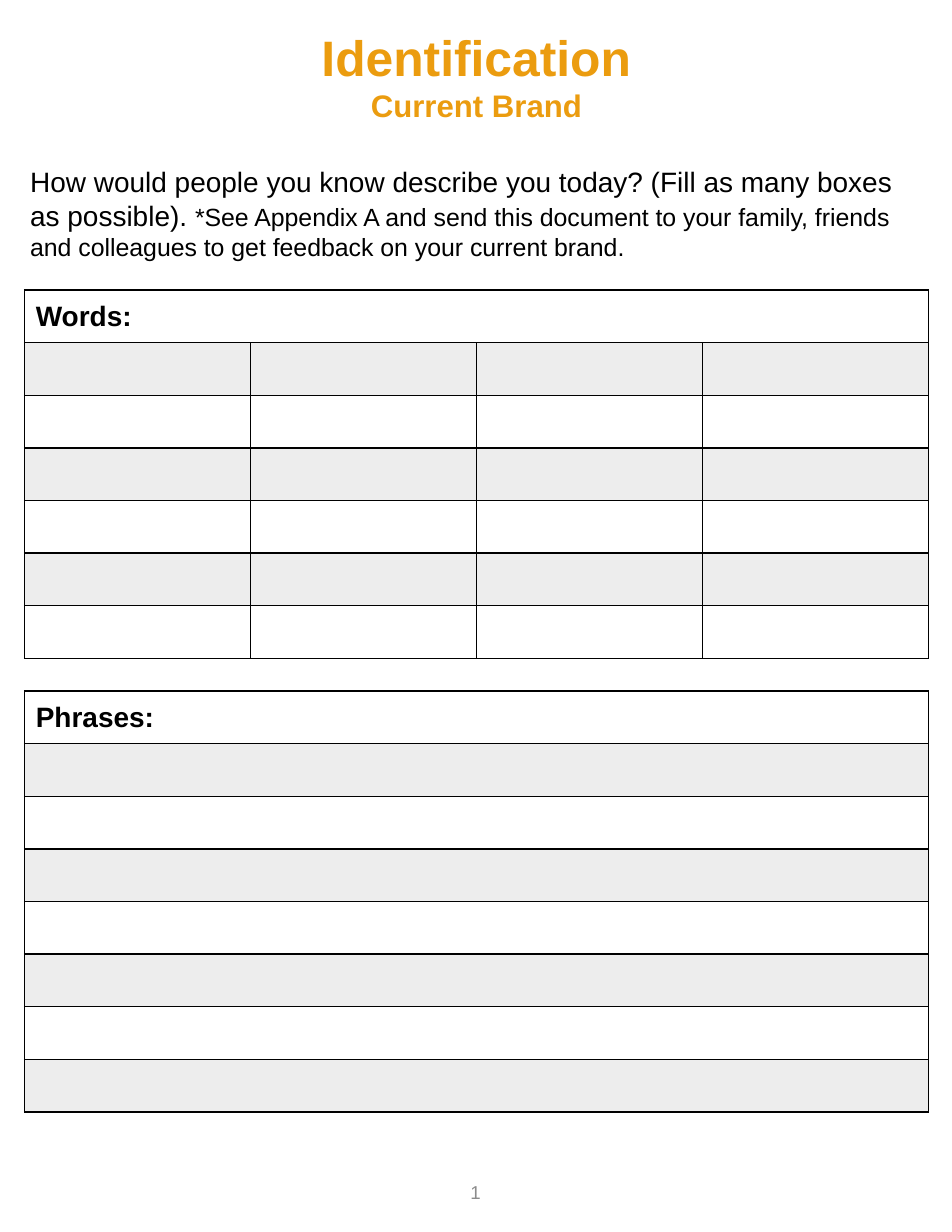
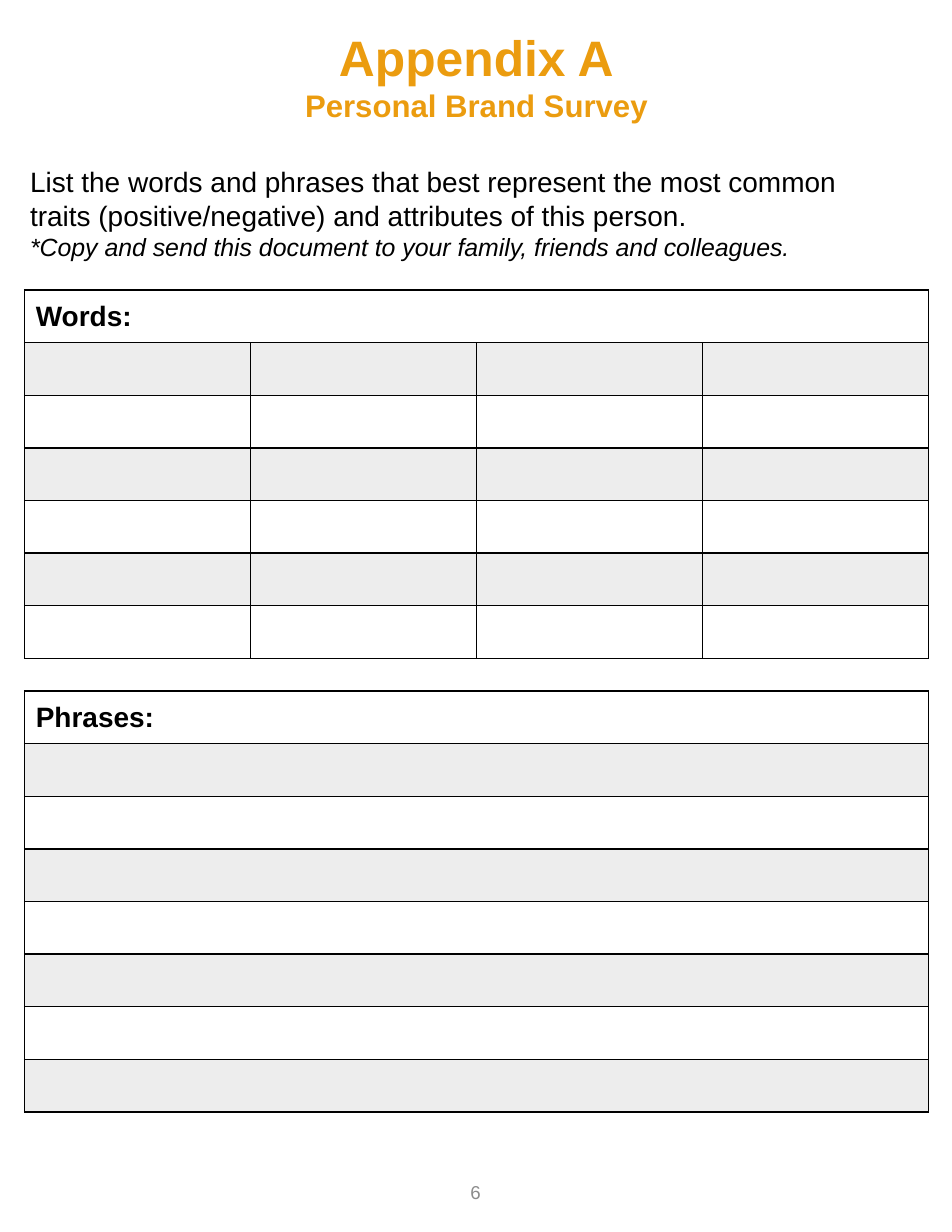
from lxml import etree
from pptx import Presentation
from pptx.dml.color import RGBColor
from pptx.enum import text
from pptx.oxml import ns
from pptx.util import Inches, Pt

COLORS = {
    "paper": "FFFFFF",
    "title": "EB9C0F",
    "ink": "000000",
    "band": "EDEDED",
    "number": "8C8C8C",
}
FONT = "Arial"
ROW_HEIGHT = 0.47

# Regions shared by both pages: left, top, width, height
TITLE_BOX = (1.17, 0.19, 6.17, 0.98)
PROMPT_BOX = (0.17, 1.42, 7.99, 0.98)
WORDS_BOX = (0.22, 2.59, 8.07, 7 * ROW_HEIGHT)
PHRASES_BOX = (0.22, 6.17, 8.07, 8 * ROW_HEIGHT)
NUMBER_BOX = (2.9, 10.2, 2.69, 0.59)

# Each prompt is a list of paragraphs, each a list of (wording, size, italic)
PAGES = [
    ("Identification", "Current Brand", [[
        ("How would people you know describe you today? "
         "(Fill as many boxes as possible). ", 18, False),
        ("*See Appendix A and send this document to your family, friends "
         "and colleagues to get feedback on your current brand.", 16, False),
    ]], "1"),
    ("Appendix A", "Personal Brand Survey", [
        [("List the words and phrases that best represent the most common "
          "traits (positive/negative) and attributes of this person.", 18, False)],
        [("*Copy and send this document to your family, friends "
          "and colleagues.", 16, True)],
    ], "6"),
]


def color(name):
    return RGBColor.from_string(COLORS[name])


def style(font, size, ink, bold=False, italic=False):
    font.name = FONT
    font.size = Pt(size)
    font.color.rgb = color(ink)
    font.bold = bold
    font.italic = italic


def add_text_frame(page, box, anchor=text.MSO_ANCHOR.TOP):
    frame = page.shapes.add_textbox(*map(Inches, box)).text_frame
    frame.word_wrap = True
    frame.vertical_anchor = anchor
    return frame


def add_paragraph(frame, index):
    return frame.add_paragraph() if index else frame.paragraphs[0]


def add_title(page, box, title, subtitle):
    frame = add_text_frame(page, box)
    for index, (line, size) in enumerate([(title, 32), (subtitle, 20)]):
        para = add_paragraph(frame, index)
        para.text = line
        para.alignment = text.PP_ALIGN.CENTER
        style(para.font, size, "title", bold=True)


def add_prompt(page, box, paragraphs):
    frame = add_text_frame(page, box)
    for index, spans in enumerate(paragraphs):
        para = add_paragraph(frame, index)
        for wording, size, italic in spans:
            span = para.add_run()
            span.text = wording
            style(span.font, size, "ink", italic=italic)


def add_page_number(page, box, number):
    frame = add_text_frame(page, box, text.MSO_ANCHOR.BOTTOM)
    para = frame.paragraphs[0]
    para.text = number
    para.alignment = text.PP_ALIGN.CENTER
    style(para.font, 12, "number")


def add_borders(cell):
    properties = cell._tc.get_or_add_tcPr()
    for side in ("lnL", "lnR", "lnT", "lnB"):
        line = etree.SubElement(properties, ns.qn(f"a:{side}"), w=str(Pt(1)))
        fill = etree.SubElement(line, ns.qn("a:solidFill"))
        etree.SubElement(fill, ns.qn("a:srgbClr"), val=COLORS["ink"])


def add_answer_table(page, box, heading, column_count):
    """Heading row over empty rows that alternate grey and white."""
    row_count = round(box[3] / ROW_HEIGHT)
    table = page.shapes.add_table(row_count, column_count, *map(Inches, box)).table
    table.first_row = table.horz_banding = False
    for column in table.columns:
        column.width = Inches(box[2] / column_count)
    for index, row in enumerate(table.rows):
        row.height = Inches(ROW_HEIGHT)
        for cell in row.cells:
            add_borders(cell)
            cell.fill.solid()
            cell.fill.fore_color.rgb = color("band" if index % 2 else "paper")

    # Heading spans the full width
    header = table.cell(0, 0)
    if column_count > 1:
        header.merge(table.cell(0, column_count - 1))
    header.vertical_anchor = text.MSO_ANCHOR.MIDDLE
    para = header.text_frame.paragraphs[0]
    para.text = heading
    style(para.font, 18, "ink", bold=True)


def add_worksheet(deck, title, subtitle, prompt, number):
    page = deck.slides.add_slide(deck.slide_layouts[6])
    page.background.fill.solid()
    page.background.fill.fore_color.rgb = color("paper")
    add_title(page, TITLE_BOX, title, subtitle)
    add_prompt(page, PROMPT_BOX, prompt)
    add_answer_table(page, WORDS_BOX, "Words:", 4)
    add_answer_table(page, PHRASES_BOX, "Phrases:", 1)
    add_page_number(page, NUMBER_BOX, number)


def main():
    deck = Presentation()
    deck.slide_width = Inches(8.5)
    deck.slide_height = Inches(11)
    for content in PAGES:
        add_worksheet(deck, *content)
    deck.save("out.pptx")


if __name__ == "__main__":
    main()
